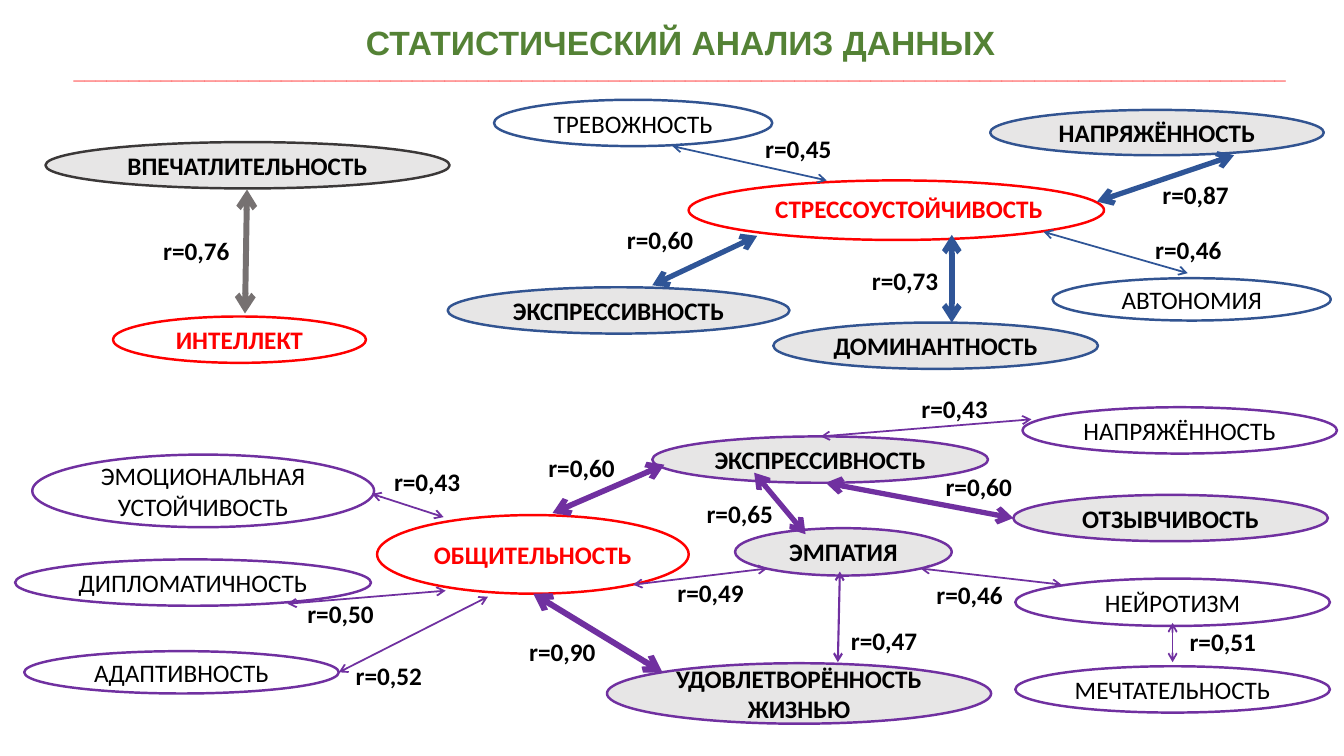
from typing import NamedTuple

from lxml import etree
from pptx import Presentation
from pptx.dml.color import RGBColor
from pptx.enum.shapes import MSO_CONNECTOR, MSO_SHAPE
from pptx.enum.text import MSO_ANCHOR, MSO_AUTO_SIZE, PP_ALIGN
from pptx.oxml.ns import qn
from pptx.util import Inches, Pt

OVAL = MSO_SHAPE.OVAL
STRAIGHT = MSO_CONNECTOR.STRAIGHT
MIDDLE = MSO_ANCHOR.MIDDLE
CENTER = PP_ALIGN.CENTER
FIT_SHAPE = MSO_AUTO_SIZE.SHAPE_TO_FIT_TEXT

BLACK, WHITE, RED, GREEN = "000000", "FFFFFF", "FF0000", "548235"
SHADED, CHARCOAL, GRAY = "E7E6E6", "3B3838", "767171"
BLUE, ARROW_BLUE, PURPLE = "325491", "2F5597", "7030A0"
TIGHT_LABEL = 0.86


class Trait(NamedTuple):
    text: str
    left: float
    top: float
    width: float
    height: float
    outline: str
    fill: str | None = WHITE


class Link(NamedTuple):
    x1: float
    y1: float
    x2: float
    y2: float
    color: str
    weight: float


class Label(NamedTuple):
    text: str
    left: float
    top: float
    width: float = TIGHT_LABEL
    color: str = BLACK


TRAITS = [
    Trait("ВПЕЧАТЛИТЕЛЬНОСТЬ", 0.45, 1.41, 4.01, 0.46, CHARCOAL, SHADED),
    Trait("ИНТЕЛЛЕКТ", 1.12, 3.14, 2.51, 0.46, RED, None),
    Trait("", 6.83, 1.79, 4.12, 0.59, RED, None),
    Trait("ТРЕВОЖНОСТЬ", 4.9, 0.99, 2.76, 0.46, BLUE),
    Trait("НАПРЯЖЁННОСТЬ", 9.82, 1.09, 3.31, 0.45, BLUE, SHADED),
    Trait("ЭКСПРЕССИВНОСТЬ", 4.44, 2.85, 3.39, 0.46, BLUE, SHADED),
    Trait("ДОМИНАНТНОСТЬ", 7.67, 3.2, 3.22, 0.46, BLUE, SHADED),
    Trait("АВТОНОМИЯ", 10.44, 2.76, 2.76, 0.42, BLUE),
    Trait("ОБЩИТЕЛЬНОСТЬ", 3.74, 5.11, 3.09, 0.78, RED, None),
    Trait("АДАПТИВНОСТЬ", 0.24, 6.46, 3.12, 0.42, PURPLE),
    Trait("ДИПЛОМАТИЧНОСТЬ", 0.15, 5.55, 3.53, 0.46, PURPLE),
    Trait("ЭМОЦИОНАЛЬНАЯ\nУСТОЙЧИВОСТЬ", 0.32, 4.51, 3.39, 0.72, PURPLE),
    Trait("ЭКСПРЕССИВНОСТЬ", 6.47, 4.33, 3.33, 0.46, PURPLE, SHADED),
    Trait("ЭМПАТИЯ", 7.29, 5.24, 2.15, 0.47, PURPLE, SHADED),
    Trait("УДОВЛЕТВОРЁННОСТЬ\nЖИЗНЬЮ", 6.02, 6.58, 3.81, 0.6, PURPLE, SHADED),
    Trait("НАПРЯЖЁННОСТЬ", 10.14, 4.04, 3.12, 0.46, PURPLE),
    Trait("ОТЗЫВЧИВОСТЬ", 10.05, 4.91, 3.12, 0.46, PURPLE, SHADED),
    Trait("НЕЙРОТИЗМ", 10.07, 5.74, 3.12, 0.47, PURPLE),
    Trait("МЕЧТАТЕЛЬНОСТЬ", 10.07, 6.61, 3.12, 0.46, PURPLE),
]

LINKS = [
    Link(2.45, 1.88, 2.43, 3.11, GRAY, 4.25),
    Link(6.67, 1.45, 8.2, 1.79, ARROW_BLUE, 1.25),
    Link(12.24, 1.54, 10.88, 2, ARROW_BLUE, 3.75),
    Link(7.51, 2.34, 6.47, 2.83, ARROW_BLUE, 3.75),
    Link(10.35, 2.3, 11.78, 2.71, ARROW_BLUE, 1.25),
    Link(9.44, 2.33, 9.44, 3.2, ARROW_BLUE, 4),
    Link(3.69, 4.9, 4.4, 5.13, PURPLE, 1.25),
    Link(6.59, 4.61, 5.48, 5.09, PURPLE, 4),
    Link(2.85, 5.99, 4.42, 5.86, PURPLE, 1.25),
    Link(6.28, 5.8, 7.61, 5.64, PURPLE, 1.25),
    Link(3.36, 6.67, 4.84, 5.92, PURPLE, 1.25),
    Link(5.29, 5.89, 6.57, 6.67, PURPLE, 4.25),
    Link(8.14, 4.33, 10.23, 4.16, PURPLE, 1.25),
    Link(8.19, 4.79, 10.05, 5.14, PURPLE, 3.75),
    Link(9.13, 5.64, 10.53, 5.8, PURPLE, 1.25),
    Link(8.33, 5.67, 8.31, 6.57, PURPLE, 1.5),
    Link(11.63, 6.18, 11.63, 6.57, PURPLE, 1.25),
    Link(7.48, 4.69, 7.99, 5.3, PURPLE, 3.75),
]

LABELS = [
    Label("СТРЕССОУСТОЙЧИВОСТЬ", 7.59, 1.87, 2.97, RED),
    Label("r=0,76", 1.52, 2.29),
    Label("r=0,60", 6.12, 2.18),
    Label("r=0,73", 8.55, 2.58),
    Label("r=0,87", 11.43, 1.73, 0.95),
    Label("r=0,60", 9.28, 4.63),
    Label("r=0,43", 9.04, 3.85, 1.02),
    Label("r=0,51", 11.7, 6.16),
    Label("r=0,46", 9.19, 5.7, 0.96),
    Label("r=0,47", 8.34, 6.15, 1.09),
    Label("r=0,65", 6.91, 4.89),
    Label("r=0,60", 5.34, 4.44),
    Label("r=0,49", 6.62, 5.68, 0.92),
    Label("r=0,90", 5.15, 6.26, 1.11),
    Label("r=0,52", 3.43, 6.5, 1),
    Label("r=0,50", 2.95, 5.89, 0.97),
    Label("r=0,43", 3.81, 4.58),
    Label("r=0,45", 7.49, 1.27, 0.91),
    Label("r=0,46", 11.36, 2.28, 1.13),
]


def rgb(color: str) -> RGBColor:
    return RGBColor.from_string(color)


def set_font(font, size: float, color: str, bold: bool, name: str = "Calibri") -> None:
    font.name = name
    font.size = Pt(size)
    font.bold = bold
    font.color.rgb = rgb(color)


def add_title(slide) -> None:
    box = slide.shapes.add_textbox(Inches(0.61), Inches(0.14), Inches(12.28), Inches(0.81))
    frame = box.text_frame
    frame.word_wrap = True
    frame.vertical_anchor = MIDDLE
    paragraph = frame.paragraphs[0]
    paragraph.alignment = CENTER
    paragraph.line_spacing = 0.9
    heading = paragraph.add_run()
    heading.text = "СТАТИСТИЧЕСКИЙ АНАЛИЗ ДАННЫХ"
    set_font(heading.font, 24, GREEN, True, "Arial")
    paragraph.add_line_break()
    rule = paragraph.add_run()
    rule.text = "_" * 111
    set_font(rule.font, 14, RED, True, "Arial")


def add_trait(slide, trait: Trait) -> None:
    shape = slide.shapes.add_shape(OVAL, Inches(trait.left), Inches(trait.top),
                                   Inches(trait.width), Inches(trait.height))
    shape.shadow.inherit = False
    shape.line.color.rgb = rgb(trait.outline)
    shape.line.width = Pt(1.75)
    if trait.fill:
        shape.fill.solid()
        shape.fill.fore_color.rgb = rgb(trait.fill)
    else:
        shape.fill.background()
    if not trait.text:
        return
    frame = shape.text_frame
    frame.text = trait.text
    frame.vertical_anchor = MIDDLE
    for paragraph in frame.paragraphs:
        paragraph.alignment = CENTER
        set_font(paragraph.font, 18, RED if trait.outline == RED else BLACK, trait.fill != WHITE)


def add_link(slide, link: Link) -> None:
    """Draw a line with an open arrowhead at both ends."""
    connector = slide.shapes.add_connector(STRAIGHT, Inches(link.x1), Inches(link.y1),
                                           Inches(link.x2), Inches(link.y2))
    connector.line.color.rgb = rgb(link.color)
    connector.line.width = Pt(link.weight)
    properties = connector._element.spPr
    line = properties.find(qn("a:ln"))
    for end in ("a:headEnd", "a:tailEnd"):
        etree.SubElement(line, qn(end), type="arrow")
    etree.SubElement(properties, qn("a:effectLst"))


def add_label(slide, label: Label) -> None:
    box = slide.shapes.add_textbox(Inches(label.left), Inches(label.top),
                                   Inches(label.width), Inches(0.4))
    frame = box.text_frame
    frame.text = label.text
    frame.word_wrap = label.width > TIGHT_LABEL
    frame.auto_size = FIT_SHAPE
    set_font(frame.paragraphs[0].font, 18, label.color, True)


def main() -> None:
    presentation = Presentation()
    presentation.slide_width = Inches(13.33)
    presentation.slide_height = Inches(7.5)
    slide = presentation.slides.add_slide(presentation.slide_layouts[6])
    add_title(slide)
    for trait in TRAITS:
        add_trait(slide, trait)
    for link in LINKS:
        add_link(slide, link)
    for label in LABELS:
        add_label(slide, label)
    presentation.save("out.pptx")


if __name__ == "__main__":
    main()
